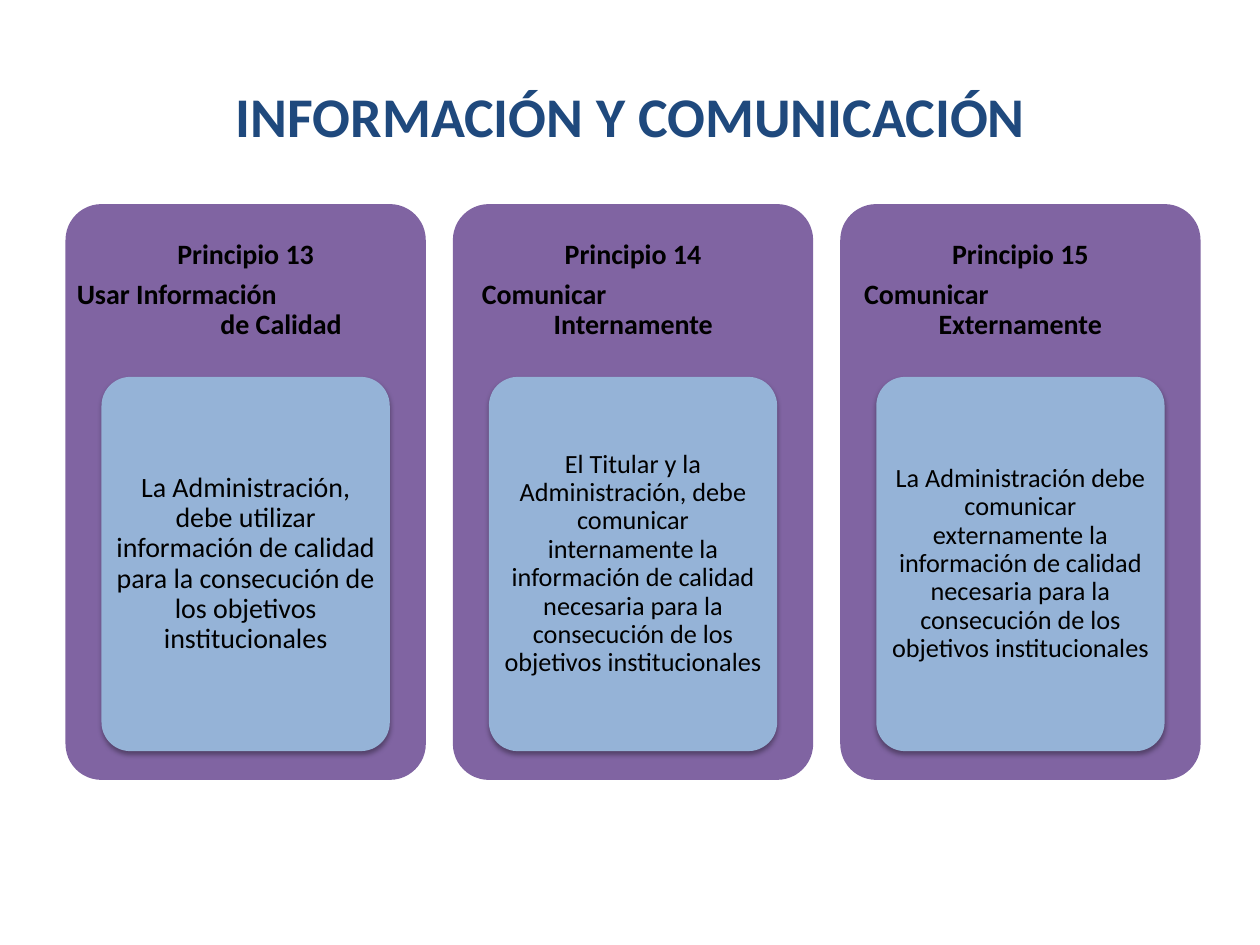
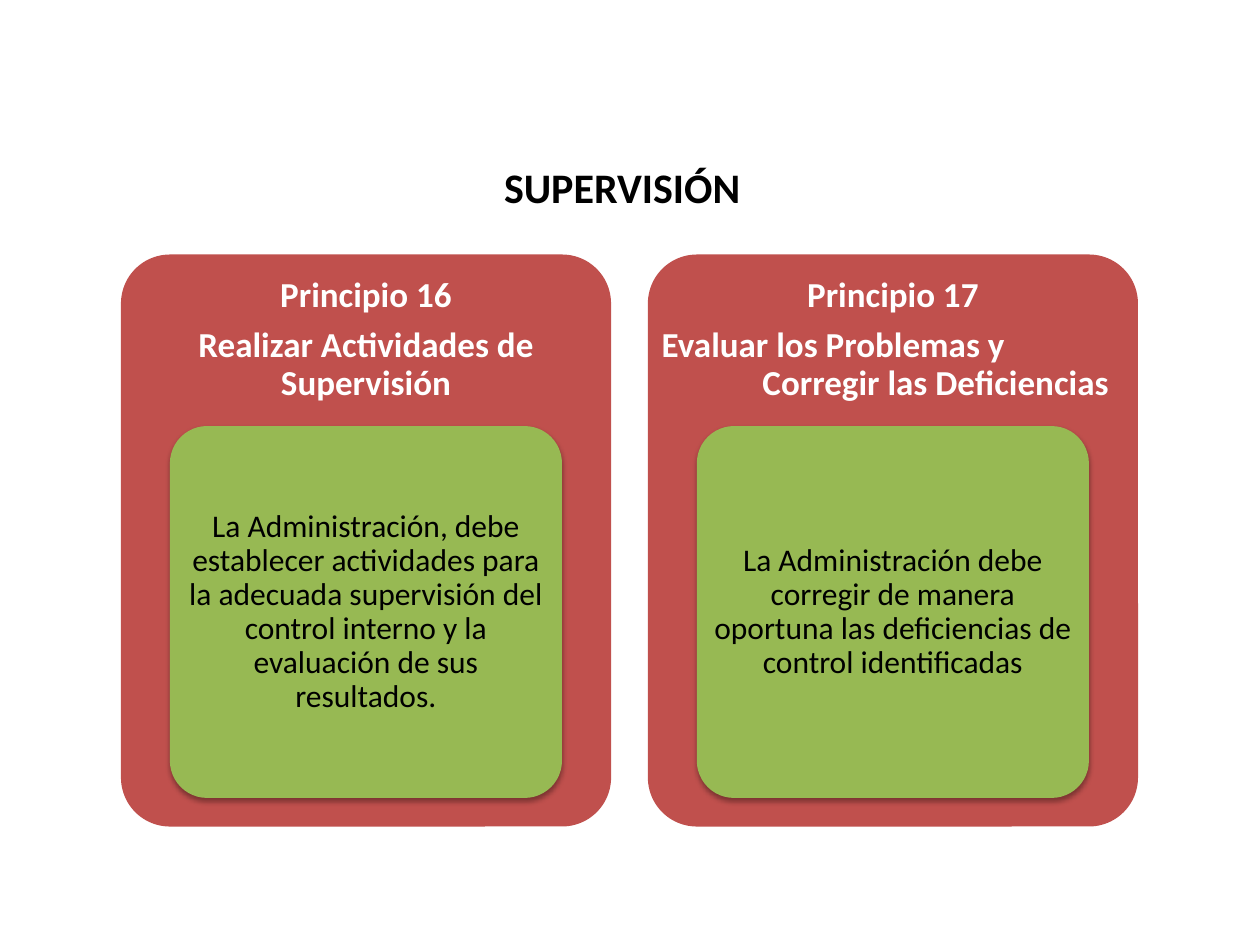
import pptx
import pptx.dml.color
import pptx.enum.shapes
import pptx.enum.text
import pptx.oxml
import pptx.util
from dataclasses import dataclass
from pptx.util import Inches

FONT = "Calibri"
BLACK, WHITE, NAVY = "000000", "FFFFFF", "1F497D"
PURPLE, LIGHT_BLUE = "8064A2", "95B3D7"
RED, GREEN = "C0504D", "97B953"

CORNER = 0.1          # corner radius as a share of the shorter side
PITCH = 1.075         # card step as a share of the card width
HEADER_SHARE = 0.3    # header height as a share of the card height
BODY_WIDTH, BODY_HEIGHT = 0.8, 0.65

SHADOW = (
    '<a:effectLst xmlns:a="http://schemas.openxmlformats.org/drawingml/2006/main">'
    '<a:outerShdw blurRad="39400" dist="23000" dir="5400000" rotWithShape="0">'
    '<a:srgbClr val="000000"><a:alpha val="35000"/></a:srgbClr>'
    '</a:outerShdw></a:effectLst>'
)


@dataclass
class CardStyle:
    left: float
    top: float
    width: float
    height: float
    fill: str
    body_fill: str
    header_color: str
    header_size: int
    header_inset: float
    body_insets: tuple


@dataclass
class Principle:
    number: int
    heading: tuple      # one entry for each forced line
    body: str
    body_size: int
    indents: tuple = None  # left edges of a stepped two-line heading


INFORMATION_STYLE = CardStyle(0.52, 1.62, 2.86, 4.57, PURPLE, LIGHT_BLUE,
                              BLACK, 16, 0.07, (0.04, 0.03))
SUPERVISION_STYLE = CardStyle(0.96, 2.02, 3.89, 4.54, RED, GREEN,
                              WHITE, 20, 0.08, (0.05, 0.04))

INFORMATION = [
    Principle(13, ("Usar Información", "de Calidad"),
              "La Administración, debe utilizar información de calidad para la "
              "consecución de los objetivos institucionales", 16, (0.02, 1.16)),
    Principle(14, ("Comunicar", "Internamente"),
              "El Titular y la Administración, debe comunicar internamente la "
              "información de calidad necesaria para la consecución de los "
              "objetivos institucionales", 15, (0.16, 0.73)),
    Principle(15, ("Comunicar", "Externamente"),
              "La Administración debe comunicar externamente la información de "
              "calidad necesaria para la consecución de los objetivos "
              "institucionales", 15, (0.12, 0.71)),
]
SUPERVISION = [
    Principle(16, ("Realizar Actividades de Supervisión",),
              "La Administración, debe establecer actividades para la adecuada "
              "supervisión del control interno y la evaluación de sus "
              "resultados.", 18),
    Principle(17, ("Evaluar los Problemas y", "Corregir las Deficiencias"),
              "La Administración debe corregir de manera oportuna las "
              "deficiencias de control identificadas", 18, (0.03, 0.83)),
]


def rgb(hex_color):
    return pptx.dml.color.RGBColor.from_string(hex_color)


def add_span(para, text, size, color, bold=False):
    span = para.add_run()
    span.text = text
    span.font.name = FONT
    span.font.size = pptx.util.Pt(size)
    span.font.bold = bold
    span.font.color.rgb = rgb(color)


def center(para):
    para.alignment = pptx.enum.text.PP_ALIGN.CENTER
    para.line_spacing = 0.9


def set_frame(frame, side, edge, anchor=pptx.enum.text.MSO_ANCHOR.MIDDLE):
    frame.word_wrap = True
    frame.auto_size = pptx.enum.text.MSO_AUTO_SIZE.NONE
    frame.vertical_anchor = anchor
    frame.margin_left = frame.margin_right = Inches(side)
    frame.margin_top = frame.margin_bottom = Inches(edge)


def add_title(page, text, left, top, width, height, size, color):
    title = page.shapes.title
    title.left, title.top = Inches(left), Inches(top)
    title.width, title.height = Inches(width), Inches(height)
    set_frame(title.text_frame, 0.1, 0.05, pptx.enum.text.MSO_ANCHOR.TOP)
    para = title.text_frame.paragraphs[0]
    para.alignment = pptx.enum.text.PP_ALIGN.LEFT
    add_span(para, text, size, color, bold=True)


def add_panel(page, left, top, width, height, fill):
    panel = page.shapes.add_shape(
        pptx.enum.shapes.MSO_SHAPE.ROUNDED_RECTANGLE,
        Inches(left), Inches(top), Inches(width), Inches(height))
    panel.adjustments[0] = CORNER
    panel.fill.solid()
    panel.fill.fore_color.rgb = rgb(fill)
    panel.line.fill.background()
    panel.shadow.inherit = False
    return panel


def add_soft_shadow(panel):
    properties = panel.fill._xPr
    empty_list = properties.find(pptx.oxml.ns.qn("a:effectLst"))
    properties.replace(empty_list, pptx.oxml.parse_xml(SHADOW))


def add_header(page, principle, style, left):
    box = page.shapes.add_textbox(
        Inches(left), Inches(style.top),
        Inches(style.width), Inches(style.height * HEADER_SHARE))
    frame = box.text_frame
    set_frame(frame, style.header_inset, style.header_inset)
    font = (style.header_size, style.header_color, True)

    number = frame.paragraphs[0]
    center(number)
    number.space_after = pptx.util.Pt(style.header_size * 0.35)
    add_span(number, f"Principio {principle.number}", *font)

    heading = frame.add_paragraph()
    center(heading)
    if principle.indents:
        # The first line hangs left of the second
        first, second = principle.indents
        heading.alignment = pptx.enum.text.PP_ALIGN.LEFT
        properties = heading._p.get_or_add_pPr()
        properties.set("marL", str(Inches(second)))
        properties.set("indent", str(Inches(first) - Inches(second)))
    for index, line in enumerate(principle.heading):
        if index:
            heading.add_line_break()
        add_span(heading, line, *font)


def add_card(page, principle, style, left):
    # Outer panel and its header
    add_panel(page, left, style.top, style.width, style.height, style.fill)
    add_header(page, principle, style, left)

    # Inner panel with the statement
    body = add_panel(page, left + style.width * (1 - BODY_WIDTH) / 2,
                     style.top + style.height * HEADER_SHARE,
                     style.width * BODY_WIDTH, style.height * BODY_HEIGHT,
                     style.body_fill)
    add_soft_shadow(body)
    set_frame(body.text_frame, *style.body_insets)
    para = body.text_frame.paragraphs[0]
    center(para)
    add_span(para, principle.body, principle.body_size, BLACK)


def add_cards(page, principles, style):
    for index, principle in enumerate(principles):
        add_card(page, principle, style, style.left + index * style.width * PITCH)


def main():
    deck = pptx.Presentation()
    deck.slide_width, deck.slide_height = Inches(10), Inches(7.5)
    title_only = deck.slide_layouts[5]

    # Information and communication
    page = deck.slides.add_slide(title_only)
    add_title(page, "INFORMACIÓN Y COMUNICACIÓN", 1.77, 0.6, 7.56, 0.64, 32, NAVY)
    add_cards(page, INFORMATION, INFORMATION_STYLE)

    # Supervision
    page = deck.slides.add_slide(title_only)
    add_title(page, "SUPERVISIÓN", 3.9, 1.23, 6, 0.5, 24, BLACK)
    add_cards(page, SUPERVISION, SUPERVISION_STYLE)

    deck.save("out.pptx")


if __name__ == "__main__":
    main()
